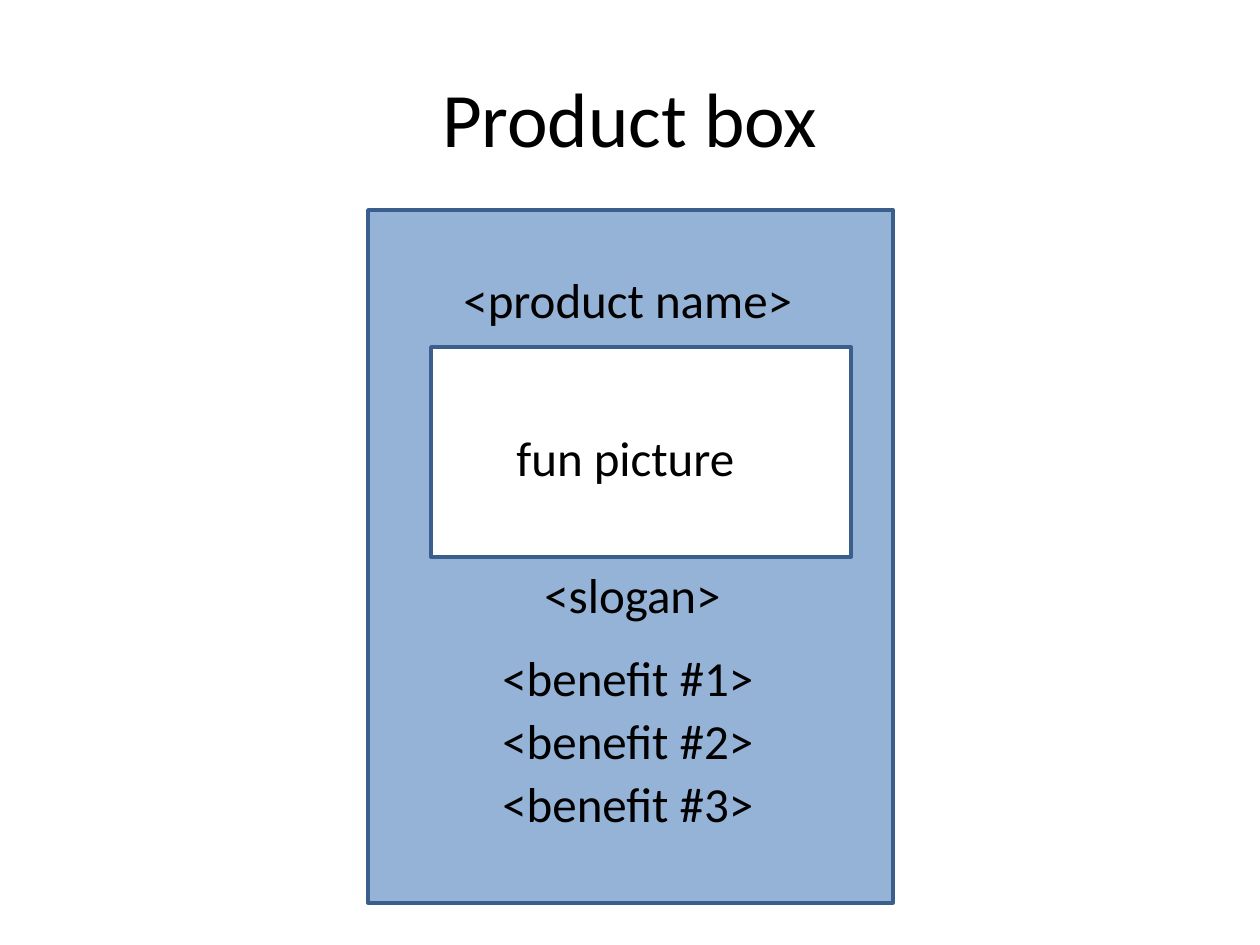
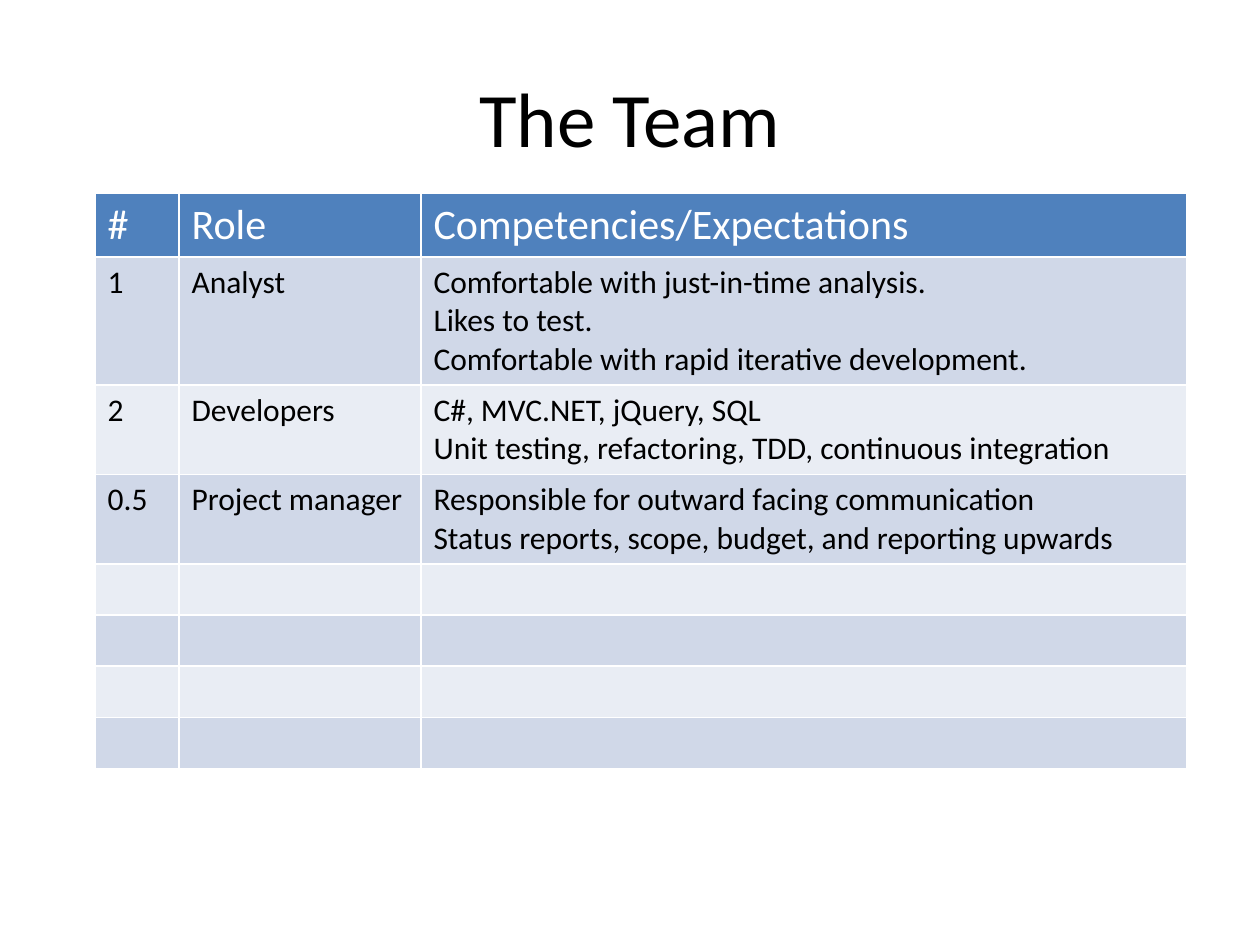
from dataclasses import dataclass

from pptx import Presentation
from pptx.dml.color import RGBColor
from pptx.enum.shapes import MSO_SHAPE
from pptx.enum.text import MSO_ANCHOR, MSO_AUTO_SIZE, PP_ALIGN
from pptx.util import Emu, Pt

# Content: (text, left, top, width) for labels, in px
BOX_TITLE = "Product box"
BOX_FRAME = (368, 210, 525, 693)
PICTURE_PANEL = (431, 347, 420, 210)
LABEL_HEIGHT = 71
BOX_LABELS = [
    ("<product name>", 451, 263, 358),
    ("fun picture", 504, 421, 246),
    ("<slogan>", 532, 558, 204),
]
BENEFITS = ["<benefit #1>", "<benefit #2>", "<benefit #3>"]
BENEFIT_LEFT, BENEFIT_TOP, BENEFIT_WIDTH, BENEFIT_STEP = 490, 641, 280, 63

TEAM_TITLE = "The Team"
TEAM_HEADINGS = ["#", "Role", ["Competencies/Expectations"]]
TEAM_ROLES = [
    ("1", "Analyst", [
        "Comfortable with just-in-time analysis.",
        "Likes to test.",
        "Comfortable with rapid iterative development.",
    ]),
    ("2", "Developers", [
        "C#, MVC.NET, jQuery, SQL",
        "Unit testing, refactoring, TDD, continuous integration",
    ]),
    ("0.5", "Project manager", [
        "Responsible for outward facing communication",
        "Status reports, scope, budget, and reporting upwards",
    ]),
]
OPEN_ROWS = 4
TEAM_LEFT, TEAM_TOP, ROW_HEIGHT = 95, 193, 51
COLUMN_WIDTHS = [84, 242, 766]

SLIDE_SIZE = (1260, 945)
TITLE_PLACE = (63, 38, 1134, 158)


@dataclass(frozen=True)
class Theme:
    font: str = "Calibri"
    ink: str = "000000"
    paper: str = "FFFFFF"
    box: str = "95B3D7"
    outline: str = "3A5F8C"
    header: str = "4F81BD"
    bands: tuple = ("D0D8E8", "E9EDF4")
    title_size: int = 44
    label_size: int = 28
    header_size: int = 24
    cell_size: int = 18
    outline_width: int = 2


THEME = Theme()


def px(length):
    return Emu(round(length * 914400 / 126))


def place(*lengths):
    return [px(length) for length in lengths]


def style(paragraph, size, color=THEME.ink):
    paragraph.font.name = THEME.font
    paragraph.font.size = Pt(size)
    paragraph.font.bold = False
    paragraph.font.color.rgb = RGBColor.from_string(color)


def add_titled_slide(deck, text):
    slide = deck.slides.add_slide(deck.slide_layouts[5])
    title = slide.shapes.title
    title.left, title.top, title.width, title.height = place(*TITLE_PLACE)
    title.text_frame.text = text
    title.text_frame.vertical_anchor = MSO_ANCHOR.MIDDLE
    heading = title.text_frame.paragraphs[0]
    heading.alignment = PP_ALIGN.CENTER
    style(heading, THEME.title_size)
    return slide


def add_panel(slide, bounds, fill):
    panel = slide.shapes.add_shape(MSO_SHAPE.RECTANGLE, *place(*bounds))
    panel.shadow.inherit = False
    panel.fill.solid()
    panel.fill.fore_color.rgb = RGBColor.from_string(fill)
    panel.line.color.rgb = RGBColor.from_string(THEME.outline)
    panel.line.width = Pt(THEME.outline_width)


def add_label(slide, text, left, top, width):
    label = slide.shapes.add_textbox(*place(left, top, width, LABEL_HEIGHT))
    frame = label.text_frame
    frame.word_wrap = False
    frame.auto_size = MSO_AUTO_SIZE.SHAPE_TO_FIT_TEXT
    frame.text = text
    style(frame.paragraphs[0], THEME.label_size)


def fill_cell(cell, content, fill, size, color):
    cell.fill.solid()
    cell.fill.fore_color.rgb = RGBColor.from_string(fill)
    cell.text = content if isinstance(content, str) else "\n".join(content)
    for paragraph in cell.text_frame.paragraphs:
        style(paragraph, size, color)


def build_product_box(deck):
    slide = add_titled_slide(deck, BOX_TITLE)
    add_panel(slide, BOX_FRAME, THEME.box)
    add_panel(slide, PICTURE_PANEL, THEME.paper)
    for label in BOX_LABELS:
        add_label(slide, *label)
    # Benefits stack at an equal step
    for index, benefit in enumerate(BENEFITS):
        top = BENEFIT_TOP + index * BENEFIT_STEP
        add_label(slide, benefit, BENEFIT_LEFT, top, BENEFIT_WIDTH)


def build_team(deck):
    slide = add_titled_slide(deck, TEAM_TITLE)
    roles = [TEAM_HEADINGS, *TEAM_ROLES, *[("", "", "")] * OPEN_ROWS]
    bounds = place(TEAM_LEFT, TEAM_TOP, sum(COLUMN_WIDTHS), ROW_HEIGHT * len(roles))
    team = slide.shapes.add_table(len(roles), len(COLUMN_WIDTHS), *bounds).table
    for column, width in zip(team.columns, COLUMN_WIDTHS):
        column.width = px(width)
    # Header first, then alternating bands
    for index, (row, role) in enumerate(zip(team.rows, roles)):
        row.height = px(ROW_HEIGHT)
        if index == 0:
            look = (THEME.header, THEME.header_size, THEME.paper)
        else:
            look = (THEME.bands[(index - 1) % 2], THEME.cell_size, THEME.ink)
        for cell, content in zip(row.cells, role):
            fill_cell(cell, content, *look)


def main():
    deck = Presentation()
    deck.slide_width, deck.slide_height = place(*SLIDE_SIZE)
    build_product_box(deck)
    build_team(deck)
    deck.save("out.pptx")


if __name__ == "__main__":
    main()
